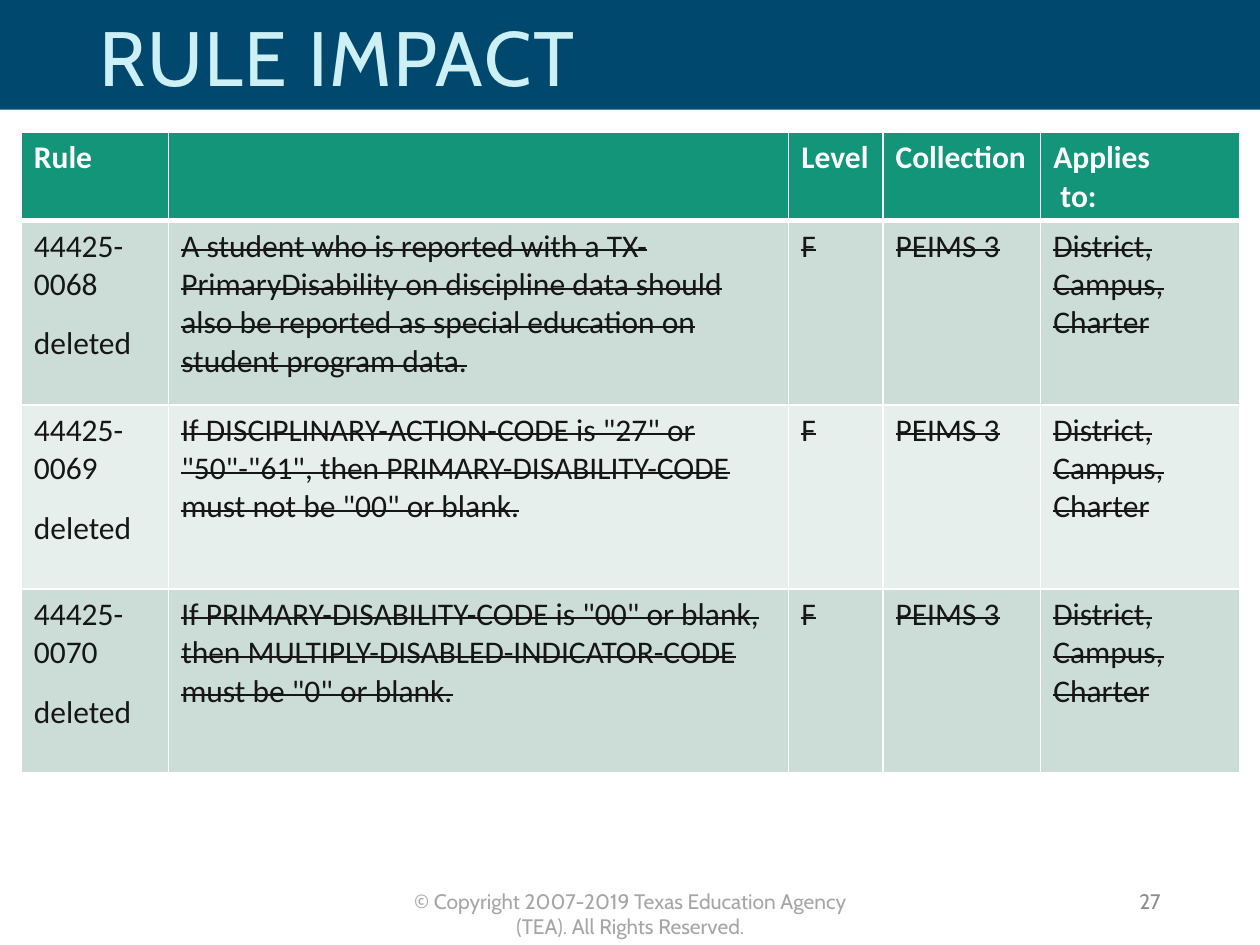
from lxml import etree
from pptx import Presentation
from pptx.dml.color import RGBColor
from pptx.enum.shapes import MSO_SHAPE
from pptx.enum.text import MSO_ANCHOR, PP_ALIGN
from pptx.oxml.ns import qn
from pptx.util import Cm, Pt

RECT = MSO_SHAPE.RECTANGLE
TOP, MIDDLE = MSO_ANCHOR.TOP, MSO_ANCHOR.MIDDLE
LEFT, CENTER, RIGHT = PP_ALIGN.LEFT, PP_ALIGN.CENTER, PP_ALIGN.RIGHT

NAVY = RGBColor(0x00, 0x48, 0x6E)
PALE_CYAN = RGBColor(0xCC, 0xF0, 0xF5)
GREEN = RGBColor(0x12, 0x95, 0x79)
BAND_DARK = RGBColor(0xCC, 0xDD, 0xD7)
BAND_LIGHT = RGBColor(0xE7, 0xEF, 0xEC)
WHITE = RGBColor(0xFF, 0xFF, 0xFF)
INK = RGBColor(0x17, 0x16, 0x16)
FOOTER_GREY = RGBColor(0xA6, 0xA6, 0xA6)
NUMBER_GREY = RGBColor(0x8C, 0x8C, 0x8C)

HEADER = [["Rule"], [], ["Level"], ["Collection"], ["Applies", " to:"]]
RULES = [
    ("44425-0068", "A student who is reported with a TX-PrimaryDisability on discipline data "
                   "should also be reported as special education on student program data."),
    ("44425-0069", 'If DISCIPLINARY-ACTION-CODE is "27" or "50"-"61", then '
                   'PRIMARY-DISABILITY-CODE must not be "00" or blank.'),
    ("44425-0070", 'If PRIMARY-DISABILITY-CODE is "00" or blank, then '
                   'MULTIPLY-DISABLED-INDICATOR-CODE must be "0" or blank.'),
]
COL_WIDTHS = [2.97, 12.5, 1.9, 3.18, 4.01]
HEADER_HEIGHT, RULE_HEIGHT = 1.78, 3.71


class SlideBuilder:
    title = {"name": "Cabin", "size": Pt(44), "color": PALE_CYAN}
    footer = {"name": "Cabin", "size": Pt(12), "color": FOOTER_GREY}
    number = {"name": "Cabin", "size": Pt(12), "color": NUMBER_GREY}
    header = {"name": "Calibri", "size": Pt(18), "color": WHITE, "bold": True}
    body = {"name": "Calibri", "size": Pt(18), "color": INK, "bold": False}

    def __init__(self, slide):
        self.slide = slide

    def band(self, x, y, w, h, color):
        sp = self.slide.shapes.add_shape(RECT, Cm(x), Cm(y), Cm(w), Cm(h))
        sp.shadow.inherit = False
        sp.fill.solid()
        sp.fill.fore_color.rgb = color
        sp.line.fill.background()

    def run(self, p, text, style, **attributes):
        """Add a run; attributes are extra run properties such as spc or strike."""
        r = p.add_run()
        r.text = text
        for key, value in style.items():
            if key == "color":
                r.font.color.rgb = value
            else:
                setattr(r.font, key, value)
        for key, value in attributes.items():
            r.font._element.set(key, value)

    def text(self, x, y, w, h, text, style, align=LEFT, anchor=MIDDLE,
             line_spacing=None, **attributes):
        tf = self.slide.shapes.add_textbox(Cm(x), Cm(y), Cm(w), Cm(h)).text_frame
        tf.word_wrap = True
        tf.vertical_anchor = anchor
        p = tf.paragraphs[0]
        p.alignment = align
        p.line_spacing = line_spacing
        self.run(p, text, style, **attributes)

    def table(self, x, y, widths, heights):
        table = self.slide.shapes.add_table(
            len(heights), len(widths), Cm(x), Cm(y),
            Cm(sum(widths)), Cm(sum(heights))).table
        for column, width in zip(table.columns, widths):
            column.width = Cm(width)
        for row, height in zip(table.rows, heights):
            row.height = Cm(height)
        return table

    def cell(self, cell, lines, style, fill, bottom=1, before=0, after=0, **attributes):
        for side, width in (("L", 1), ("R", 1), ("T", 1), ("B", bottom)):
            ln = etree.SubElement(cell._tc.get_or_add_tcPr(), qn(f"a:ln{side}"),
                                  w=str(Pt(width)))
            solid = etree.SubElement(ln, qn("a:solidFill"))
            etree.SubElement(solid, qn("a:srgbClr"), val=str(WHITE))
        cell.fill.solid()
        cell.fill.fore_color.rgb = fill
        tf = cell.text_frame
        for i, line in enumerate(lines):
            p = tf.add_paragraph() if i else tf.paragraphs[0]
            if i:
                p.space_before = Pt(before)
            p.space_after = Pt(after if before or i == len(lines) - 1 else 0)
            self.run(p, line, style, **attributes)


def main():
    prs = Presentation()
    prs.slide_width, prs.slide_height = Cm(25.4), Cm(19.05)
    s = SlideBuilder(prs.slides.add_slide(prs.slide_layouts[6]))

    s.band(0, 0, 25.4, 2.21, NAVY)
    s.text(7.72, 17.78, 9.98, 0.76,
           "© Copyright 2007-2019 Texas Education Agency (TEA). All Rights Reserved.",
           s.footer, CENTER, TOP)
    s.text(1.75, 0.13, 20.32, 2.21, "RULE IMPACT", s.title, line_spacing=0.9, spc="100")

    table = s.table(0.43, 2.67, COL_WIDTHS, [HEADER_HEIGHT] + [RULE_HEIGHT] * len(RULES))
    for col, lines in enumerate(HEADER):
        s.cell(table.cell(0, col), lines, s.header, GREEN, bottom=3)
    for row, (rule, wording) in enumerate(RULES, 1):
        fill = BAND_DARK if row % 2 else BAND_LIGHT
        s.cell(table.cell(row, 0), [rule, "deleted"], s.body, fill, before=6, after=6)
        struck = [[wording], ["F"], ["PEIMS 3"], ["District, Campus,", "Charter"]]
        for col, lines in enumerate(struck, 1):
            s.cell(table.cell(row, col), lines, s.body, fill, after=6, strike="sngStrike")

    s.text(17.93, 17.65, 5.72, 1.02, "27", s.number, RIGHT)
    prs.save("out.pptx")


if __name__ == "__main__":
    main()
